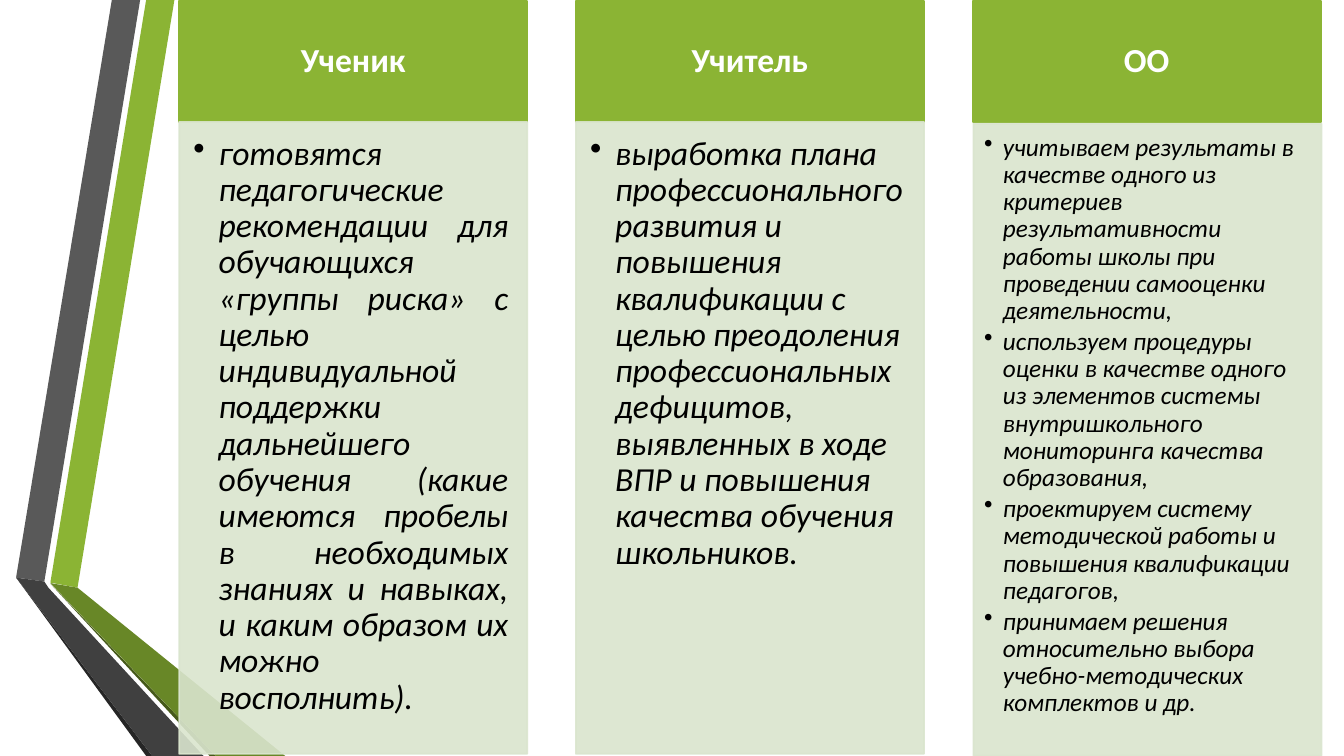
"""Builds a slide with three columns on how assessment results are used."""
from dataclasses import dataclass

from lxml import etree
from pptx import Presentation
from pptx.dml.color import RGBColor
from pptx.enum.shapes import MSO_SHAPE
from pptx.enum.text import MSO_ANCHOR, PP_ALIGN
from pptx.oxml.ns import qn
from pptx.shapes.autoshape import Shape
from pptx.slide import Slide
from pptx.text.text import TextFrame
from pptx.util import Pt

RECTANGLE = MSO_SHAPE.RECTANGLE
MIDDLE, TOP = MSO_ANCHOR.MIDDLE, MSO_ANCHOR.TOP
LEFT, CENTER, JUSTIFY = PP_ALIGN.LEFT, PP_ALIGN.CENTER, PP_ALIGN.JUSTIFY


@dataclass(frozen=True)
class Theme:
    font: str = "Calibri"
    green: str = "8BB434"
    green_dark: str = "688727"
    green_deep: str = "465A1A"
    gray: str = "595959"
    gray_dark: str = "404040"
    gray_deep: str = "262626"
    panel: str = "DAE5CE"
    panel_opacity: int = 90
    header_text: str = "FFFFFF"
    body_text: str = "000000"
    large: int = 24
    small: int = 18


THEME = Theme()


@dataclass(frozen=True)
class Ribbon:
    color: str
    points: tuple[tuple[float, float], ...]


@dataclass(frozen=True)
class Column:
    title: str
    items: tuple[str, ...]
    size: int = THEME.large
    align: PP_ALIGN = LEFT
    indent: float = 18
    insets: tuple[float, ...] = (10.1, 10.1, 13.5, 15.1)
    body_shift: tuple[float, float] = (0, 0)


RIBBONS = (
    Ribbon(THEME.green, ((36, 416.2), (55.4, 419.8), (124.6, 0), (104.4, 0))),
    Ribbon(THEME.gray, ((100.1, 0), (79.9, 0), (11.5, 412.6), (31.7, 415.4))),
    Ribbon(THEME.gray_deep, ((11.5, 412.6), (104.4, 540), (108.7, 540))),
    Ribbon(THEME.green_deep, ((36, 416.9), (149.8, 540), (154.1, 540))),
    Ribbon(THEME.green_dark, ((36, 416.5), (154.1, 540), (203.8, 540), (55.4, 419.8))),
    Ribbon(THEME.gray_dark, ((145.4, 540), (34.6, 419.8), (31.7, 415.4), (11.5, 412.6), (108.7, 540))),
)

COLUMNS = (
    Column(
        "Ученик",
        ("готовятся педагогические рекомендации для обучающихся «группы риска» с целью "
         "индивидуальной поддержки дальнейшего обучения (какие имеются пробелы в необходимых "
         "знаниях и навыках, и каким образом их можно восполнить).",),
        align=JUSTIFY,
    ),
    Column(
        "Учитель",
        ("выработка плана профессионального развития и повышения квалификации с целью "
         "преодоления профессиональных дефицитов, выявленных в ходе ВПР и повышения качества "
         "обучения школьников.",),
    ),
    Column(
        "ОО",
        ("учитываем результаты в качестве одного из критериев результативности работы школы "
         "при проведении самооценки деятельности,",
         "используем процедуры оценки в качестве одного из элементов системы внутришкольного "
         "мониторинга качества образования,",
         "проектируем систему методической работы и повышения квалификации педагогов,",
         "принимаем решения относительно выбора учебно-методических комплектов и др."),
        size=THEME.small, indent=13.5, insets=(7.6, 7.6, 10.1, 11.3), body_shift=(0.5, 1.3),
    ),
)

COLUMN_LEFT, COLUMN_PITCH, COLUMN_WIDTH = 128, 283.4, 248.6
HEADER_TOP, HEADER_HEIGHT, BODY_HEIGHT = 0.7, 86.4, 451.4


def draw_ribbon(slide: Slide, ribbon: Ribbon) -> None:
    """Draw one filled polygon of the folded ribbon."""
    start, *others = [(Pt(x), Pt(y)) for x, y in ribbon.points]
    builder = slide.shapes.build_freeform(*start)
    builder.add_line_segments(others, close=True)
    shape = builder.convert_to_shape()
    shape.shadow.inherit = False
    shape.fill.solid()
    shape.fill.fore_color.rgb = RGBColor.from_string(ribbon.color)
    shape.line.fill.background()


def draw_box(slide: Slide, left: float, top: float, height: float, color: str, opacity: int = 100) -> Shape:
    """Draw a column-wide rectangle with matching fill and outline."""
    shape = slide.shapes.add_shape(RECTANGLE, Pt(left), Pt(top), Pt(COLUMN_WIDTH), Pt(height))
    shape.shadow.inherit = False
    shape.fill.solid()
    shape.fill.fore_color.rgb = shape.line.color.rgb = RGBColor.from_string(color)
    shape.line.width = Pt(1.25)
    if opacity < 100:
        for color_element in shape.element.spPr.iter(qn("a:srgbClr")):
            etree.SubElement(color_element, qn("a:alpha"), val=str(opacity * 1000))
    return shape


def set_frame(frame: TextFrame, anchor: MSO_ANCHOR, insets: tuple[float, ...]) -> None:
    """Set wrapping, anchor and left, top, right, bottom insets."""
    frame.word_wrap = True
    frame.vertical_anchor = anchor
    frame.margin_left, frame.margin_top, frame.margin_right, frame.margin_bottom = map(Pt, insets)


def write_text(frame: TextFrame, text: str, *, size: int, color: str, align: PP_ALIGN, space_after: float,
               bold: bool = False, italic: bool = False, indent: float = 0) -> None:
    """Write one paragraph, bulleted when it has an indent."""
    paragraph = frame.paragraphs[0] if not frame.text else frame.add_paragraph()
    paragraph.alignment = align
    paragraph.line_spacing = 0.9
    paragraph.space_after = Pt(space_after)
    run = paragraph.add_run()
    run.text = text
    run.font.name = THEME.font
    run.font.size = Pt(size)
    run.font.bold, run.font.italic = bold, italic
    run.font.color.rgb = RGBColor.from_string(color)
    if indent:
        paragraph.level = 1
        properties = paragraph._p.get_or_add_pPr()
        properties.set("marL", str(Pt(indent)))
        properties.set("indent", str(-Pt(indent)))
        etree.SubElement(properties, qn("a:buChar"), char="•")


def draw_column(slide: Slide, column: Column, left: float) -> None:
    """Draw a header and the translucent panel with its items."""
    header = draw_box(slide, left, HEADER_TOP, HEADER_HEIGHT, THEME.green).text_frame
    set_frame(header, MIDDLE, (13.5, 7.7, 13.5, 7.7))
    write_text(header, column.title, size=THEME.large, color=THEME.header_text, align=CENTER,
               space_after=0.35 * THEME.large, bold=True)
    shift_x, shift_y = column.body_shift
    body = draw_box(slide, left + shift_x, HEADER_TOP + HEADER_HEIGHT + shift_y, BODY_HEIGHT,
                    THEME.panel, THEME.panel_opacity).text_frame
    set_frame(body, TOP, column.insets)
    for item in column.items:
        write_text(body, item, size=column.size, color=THEME.body_text, align=column.align,
                   space_after=0.15 * column.size, italic=True, indent=column.indent)


def main() -> None:
    """Build and save the presentation."""
    presentation = Presentation()
    presentation.slide_width, presentation.slide_height = Pt(960), Pt(540)
    slide = presentation.slides.add_slide(presentation.slide_layouts[6])
    for ribbon in RIBBONS:
        draw_ribbon(slide, ribbon)
    for index, column in enumerate(COLUMNS):
        draw_column(slide, column, COLUMN_LEFT + index * COLUMN_PITCH)
    presentation.save("out.pptx")


if __name__ == "__main__":
    main()
